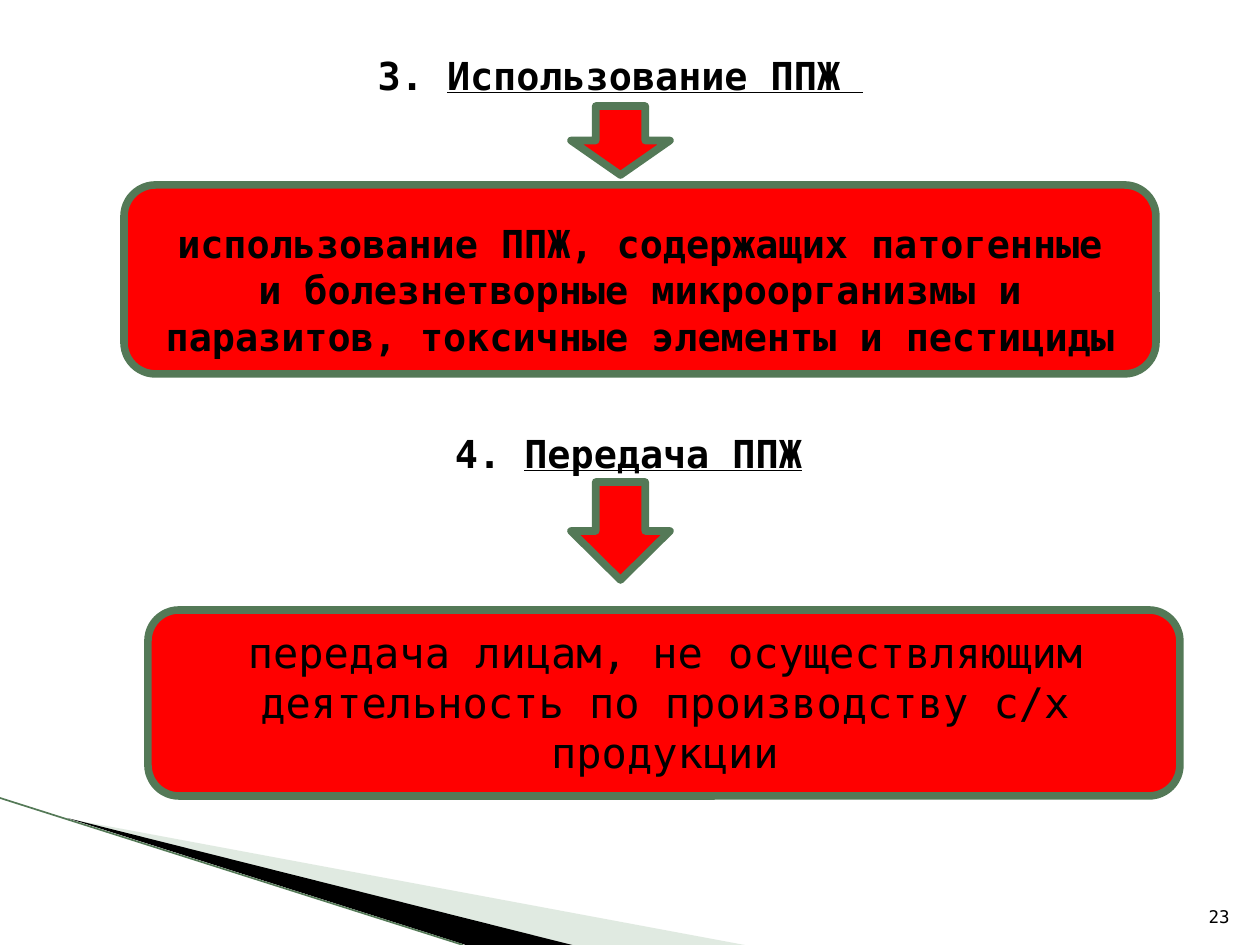
"""Build the slide on use and transfer of animal by-products."""
from dataclasses import dataclass

from lxml import etree
from pptx import Presentation
from pptx import util as u
from pptx.dml.color import RGBColor
from pptx.enum import shapes, text
from pptx.oxml.ns import qn

PX = 914400 / 126


@dataclass(frozen=True)
class Theme:
    font: str = "DejaVu Sans Mono"
    ink: str = "000000"
    red: str = "FF0000"
    green: str = "547957"
    pale: str = "B3CBB5"
    outline: float = 4.33
    hairline: float = 0.95
    heading: int = 22
    body: int = 24
    number: int = 10


@dataclass(frozen=True)
class Box:
    x: int
    y: int
    w: int
    h: int


@dataclass(frozen=True)
class Run:
    words: str
    size: int
    bold: bool = False
    underline: bool = False


@dataclass(frozen=True)
class Label:
    box: Box
    runs: tuple[Run, ...]
    align: text.PP_ALIGN = text.PP_ALIGN.CENTER
    anchor: text.MSO_ANCHOR = text.MSO_ANCHOR.TOP


@dataclass(frozen=True)
class Step:
    heading: Label
    arrow: Box
    panel: Box
    body: Label


@dataclass(frozen=True)
class Wedge:
    points: tuple[tuple[int, int], ...]
    color: str
    opacity: int = 100


T = Theme()

WEDGES = (
    Wedge(((69, 819), (750, 946), (575, 946)), T.pale, 40),
    Wedge(((67, 818), (576, 946), (469, 946)), T.ink),
)

STEPS = (
    Step(
        Label(Box(44, 46, 1153, 58), (
            Run("3. ", T.heading, True),
            Run("Использование ППЖ ", T.heading, True, True),
        )),
        Box(571, 106, 99, 69),
        Box(124, 185, 1032, 189),
        Label(Box(144, 214, 992, 152), (
            Run("использование ППЖ, содержащих патогенные и болезнетворные "
                "микроорганизмы и паразитов, токсичные элементы и пестициды",
                T.heading, True),
        )),
    ),
    Step(
        Label(Box(52, 424, 1153, 58), (
            Run("4. ", T.heading, True),
            Run("Передача ППЖ", T.heading, True, True),
        )),
        Box(571, 482, 99, 98),
        Box(148, 610, 1032, 186),
        Label(Box(194, 620, 942, 165), (
            Run("передача лицам, не осуществляющим деятельность по "
                "производству с/х продукции", T.body),
        )),
    ),
)

NUMBER = Label(Box(1192, 883, 50, 50), (Run("23", T.number),),
               text.PP_ALIGN.RIGHT, text.MSO_ANCHOR.BOTTOM)


def emu(*px: int) -> list[u.Emu]:
    """Turn pixel lengths into EMU."""
    return [u.Emu(round(v * PX)) for v in px]


def place(box: Box) -> list[u.Emu]:
    """Give left, top, width and height in EMU."""
    return emu(box.x, box.y, box.w, box.h)


def draw_wedge(s, wedge: Wedge) -> None:
    """Draw one corner wedge."""
    start, *rest = wedge.points
    builder = s.shapes.build_freeform(*start, scale=PX)
    builder.add_line_segments(rest, close=True)
    sp = builder.convert_to_shape()
    sp.shadow.inherit = False
    sp.fill.solid()
    sp.fill.fore_color.rgb = RGBColor.from_string(wedge.color)
    sp.line.fill.background()
    if wedge.opacity < 100:
        color = sp.fill._xPr.find(qn("a:solidFill"))[0]
        etree.SubElement(color, qn("a:alpha"), val=str(wedge.opacity * 1000))


def draw_edge(s) -> None:
    """Draw the thin line along the wedges."""
    line = s.shapes.add_connector(
        shapes.MSO_CONNECTOR.STRAIGHT, *emu(0, 798, 463, 945))
    line.line.color.rgb = RGBColor.from_string(T.green)
    line.line.width = u.Pt(T.hairline)
    etree.SubElement(line._element.spPr, qn("a:effectLst"))


def draw_shape(s, kind: shapes.MSO_SHAPE, box: Box) -> None:
    """Draw a red shape with a green outline."""
    sp = s.shapes.add_shape(kind, *place(box))
    sp.shadow.inherit = False
    sp.fill.solid()
    sp.fill.fore_color.rgb = RGBColor.from_string(T.red)
    sp.line.color.rgb = RGBColor.from_string(T.green)
    sp.line.width = u.Pt(T.outline)


def draw_label(s, label: Label) -> None:
    """Draw a one-paragraph text box."""
    tf = s.shapes.add_textbox(*place(label.box)).text_frame
    tf.word_wrap = True
    tf.vertical_anchor = label.anchor
    p = tf.paragraphs[0]
    p.alignment = label.align
    for run in label.runs:
        r = p.add_run()
        r.text = run.words
        r.font.name = T.font
        r.font.size = u.Pt(run.size)
        r.font.bold = run.bold
        r.font.underline = run.underline
        r.font.color.rgb = RGBColor.from_string(T.ink)


def main() -> None:
    """Build and save the slide."""
    prs = Presentation()
    prs.slide_width, prs.slide_height = emu(1260, 945)
    s = prs.slides.add_slide(prs.slide_layouts[6])
    for wedge in WEDGES:
        draw_wedge(s, wedge)
    draw_edge(s)
    for step in STEPS:
        draw_label(s, step.heading)
        draw_shape(s, shapes.MSO_SHAPE.ROUNDED_RECTANGLE, step.panel)
        draw_label(s, step.body)
        draw_shape(s, shapes.MSO_SHAPE.DOWN_ARROW, step.arrow)
    draw_label(s, NUMBER)
    prs.save("out.pptx")


if __name__ == "__main__":
    main()
